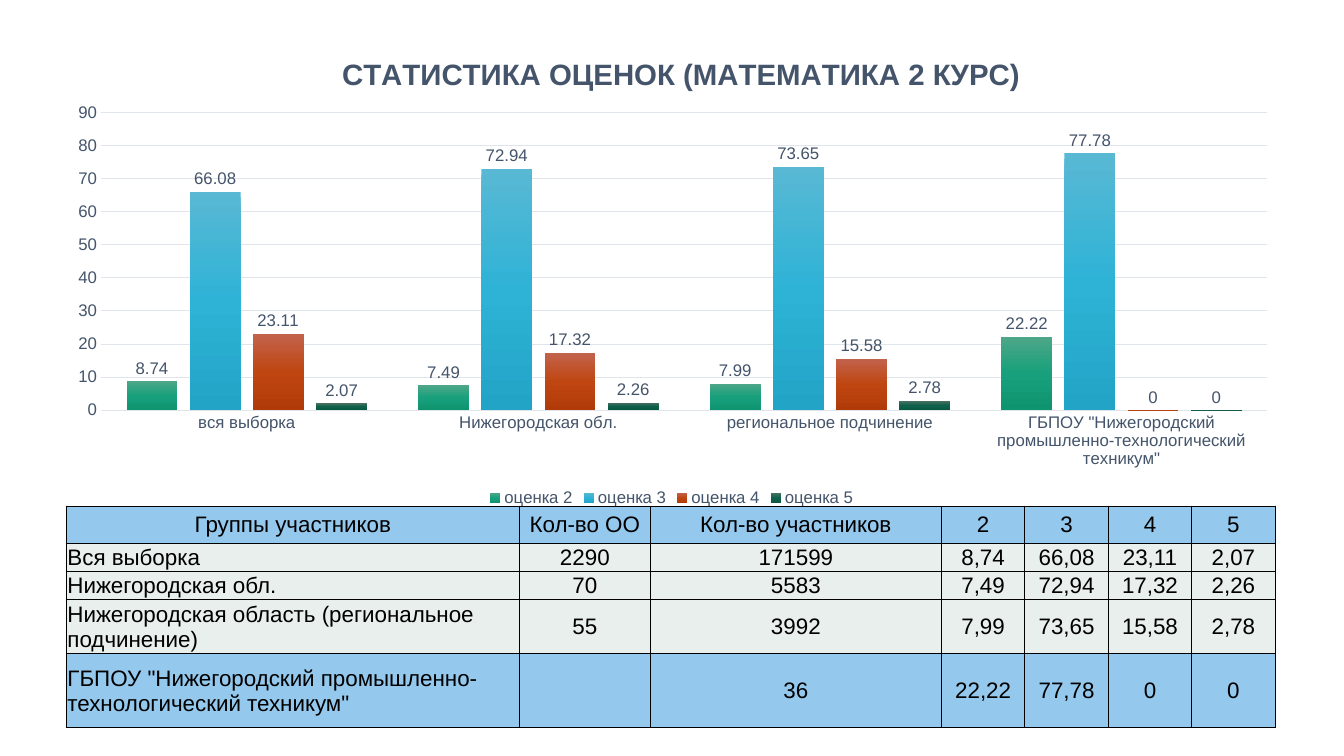
"""Build the slide with grade statistics: a column chart above a table."""
from copy import deepcopy
from dataclasses import dataclass

from pptx import Presentation
from pptx.chart.data import CategoryChartData
from pptx.dml.color import RGBColor
from pptx.enum.chart import XL_CHART_TYPE, XL_LABEL_POSITION, XL_LEGEND_POSITION, XL_TICK_MARK
from pptx.enum.text import MSO_ANCHOR, PP_ALIGN
from pptx.oxml import parse_xml
from pptx.oxml.ns import nsdecls, qn
from pptx.util import Pt


@dataclass(frozen=True)
class Theme:
    """Hold the font, colours and type sizes of the slide."""
    font: str = "Arial"
    ink: str = "000000"
    slate: str = "44546A"
    grid: str = "E0E5EB"
    blue: str = "94C8ED"
    pale: str = "E8EFEC"
    grades: tuple = (
        ("4EA788", "17A07B", "0F9470"),
        ("59B8D4", "2EB3D6", "21A4C6"),
        ("C2634D", "BF4611", "B13B08"),
        ("4C7263", "0E604A", "095943"),
    )
    title_size: float = 21
    chart_size: float = 12
    table_size: float = 16


THEME = Theme()
TITLE = "СТАТИСТИКА ОЦЕНОК (МАТЕМАТИКА 2 КУРС)"
COLLEGE = 'ГБПОУ "Нижегородский промышленно-технологический техникум"'
CATEGORIES = ("вся выборка", "Нижегородская обл.", "региональное подчинение", COLLEGE)
GRADES = (2, 3, 4, 5)
SHARES = (
    (8.74, 66.08, 23.11, 2.07),
    (7.49, 72.94, 17.32, 2.26),
    (7.99, 73.65, 15.58, 2.78),
    (22.22, 77.78, 0, 0),
)
GROUPS = (
    ("Вся выборка", "2290", "171599"),
    ("Нижегородская обл.", "70", "5583"),
    ("Нижегородская область (региональное подчинение)", "55", "3992"),
    (COLLEGE, "", "36"),
)
HEADER = ("Группы участников", "Кол-во ОО", "Кол-во участников")
COL_WIDTHS = (323.5, 93.5, 208) + (59.6,) * len(GRADES)
ROW_HEIGHTS = (26.5, 20, 20, 39, 52.5)


def style_font(font, size, color, bold=False):
    """Apply the theme font with a size and colour."""
    font.name = THEME.font
    font.size = Pt(size)
    font.bold = bold
    font.color.rgb = RGBColor.from_string(color)


def write_text(tf, text, *, size, color, bold=False, align=PP_ALIGN.CENTER):
    """Write one formatted paragraph into a text frame."""
    p = tf.paragraphs[0]
    p.alignment = align
    r = p.add_run()
    r.text = text
    style_font(r.font, size, color, bold)


def style_line(line, color, width):
    """Give a line a solid colour and a width."""
    line.color.rgb = RGBColor.from_string(color)
    line.width = Pt(width)


def place(parent, index, target="", **fractions):
    """Set the manual layout of a chart part in fractions of the chart."""
    for old in parent.findall(qn("c:layout")):
        parent.remove(old)
    modes = "".join(f'<c:{k}Mode val="edge"/>' for k in "xy")
    values = "".join(f'<c:{k} val="{v}"/>' for k, v in fractions.items())
    parent.insert(index, parse_xml(
        f"<c:layout {nsdecls('c')}><c:manualLayout>{target}{modes}{values}"
        "</c:manualLayout></c:layout>"))


def fill_gradient(series, colors):
    """Fill a series with a vertical gradient of three colours."""
    fill = series.format.fill
    fill.gradient()
    fill.gradient_angle = 270
    stops = series.format.fill._xPr.find(".//" + qn("a:gsLst"))
    stops.insert(1, deepcopy(stops[0]))
    for i, (stop, color) in enumerate(zip(fill.gradient_stops, colors)):
        stop.position = i / 2
        stop.color.rgb = RGBColor.from_string(color)


def style_axis(axis):
    """Set the text and tick marks of an axis."""
    axis.major_tick_mark = axis.minor_tick_mark = XL_TICK_MARK.NONE
    style_font(axis.tick_labels.font, THEME.chart_size, THEME.slate)


def style_series(series, colors):
    """Colour a series and label its columns."""
    fill_gradient(series, colors)
    series.invert_if_negative = False
    labels = series.data_labels
    labels.show_value = True
    labels.position = XL_LABEL_POSITION.OUTSIDE_END
    style_font(labels.font, THEME.chart_size, THEME.slate)


def add_grade_chart(s):
    """Add the clustered column chart of grade shares."""
    data = CategoryChartData()
    data.categories = CATEGORIES
    for grade, shares in zip(GRADES, zip(*SHARES)):
        data.add_series(f"оценка {grade}", shares)
    chart = s.shapes.add_chart(XL_CHART_TYPE.COLUMN_CLUSTERED, Pt(36.7), Pt(22.3),
                               Pt(886.3), Pt(342.7), data).chart
    style_font(chart.font, THEME.chart_size, THEME.slate)

    write_text(chart.chart_title.text_frame, TITLE, size=THEME.title_size,
               color=THEME.slate, bold=True)
    place(chart.chart_title._element, 1, x=0.23, y=0.04)

    chart.has_legend = True
    chart.legend.position = XL_LEGEND_POSITION.BOTTOM
    chart.legend.include_in_layout = False
    style_font(chart.legend.font, THEME.chart_size, THEME.slate)

    style_axis(chart.category_axis)
    style_line(chart.category_axis.format.line, THEME.grid, 0.75)
    axis = chart.value_axis
    style_axis(axis)
    axis.minimum_scale, axis.maximum_scale, axis.major_unit = 0, 90, 10
    axis.format.line.fill.background()
    style_line(axis.major_gridlines.format.line, THEME.grid, 0.75)

    plot = chart.plots[0]
    plot.gap_width, plot.overlap = 100, -24
    plot.vary_by_categories = False
    for series, colors in zip(plot.series, THEME.grades):
        style_series(series, colors)
    place(chart._chartSpace.find(".//" + qn("c:plotArea")), 0,
          '<c:layoutTarget val="inner"/>', x=0.04, y=0.17, w=0.94, h=0.62)


def style_cell(cell, fill):
    """Give a cell its borders, fill, margins and anchor."""
    tcPr = cell._tc.get_or_add_tcPr()
    for side in "LRTB":
        tcPr.append(parse_xml(
            f'<a:ln{side} {nsdecls("a")} w="{Pt(1)}"><a:solidFill>'
            f'<a:srgbClr val="{THEME.ink}"/></a:solidFill></a:ln{side}>'))
    cell.fill.solid()
    cell.fill.fore_color.rgb = RGBColor.from_string(fill)
    cell.margin_left = cell.margin_right = cell.margin_top = Pt(0.7)
    cell.margin_bottom = 0
    cell.vertical_anchor = MSO_ANCHOR.MIDDLE


def add_grade_table(s):
    """Add the table of participant groups and grade shares."""
    rows = [HEADER + tuple(str(g) for g in GRADES)]
    for group, shares in zip(GROUPS, SHARES):
        rows.append(group + tuple(str(v).replace(".", ",") for v in shares))
    table = s.shapes.add_table(len(rows), len(COL_WIDTHS), Pt(47.5), Pt(361.5),
                               Pt(sum(COL_WIDTHS)), Pt(sum(ROW_HEIGHTS))).table
    table.first_row = table.horz_banding = False
    for column, width in zip(table.columns, COL_WIDTHS):
        column.width = Pt(width)
    for i, (row, height) in enumerate(zip(rows, ROW_HEIGHTS)):
        table.rows[i].height = Pt(height)
        fill = THEME.blue if i in (0, len(rows) - 1) else THEME.pale
        for j, text in enumerate(row):
            cell = table.cell(i, j)
            style_cell(cell, fill)
            if text:
                align = PP_ALIGN.LEFT if i and not j else PP_ALIGN.CENTER
                write_text(cell.text_frame, text, size=THEME.table_size,
                           color=THEME.ink, align=align)


def main():
    """Build the slide and save it."""
    prs = Presentation()
    prs.slide_width, prs.slide_height = Pt(960), Pt(540)
    s = prs.slides.add_slide(prs.slide_layouts[6])
    add_grade_chart(s)
    add_grade_table(s)
    prs.save("out.pptx")


if __name__ == "__main__":
    main()
